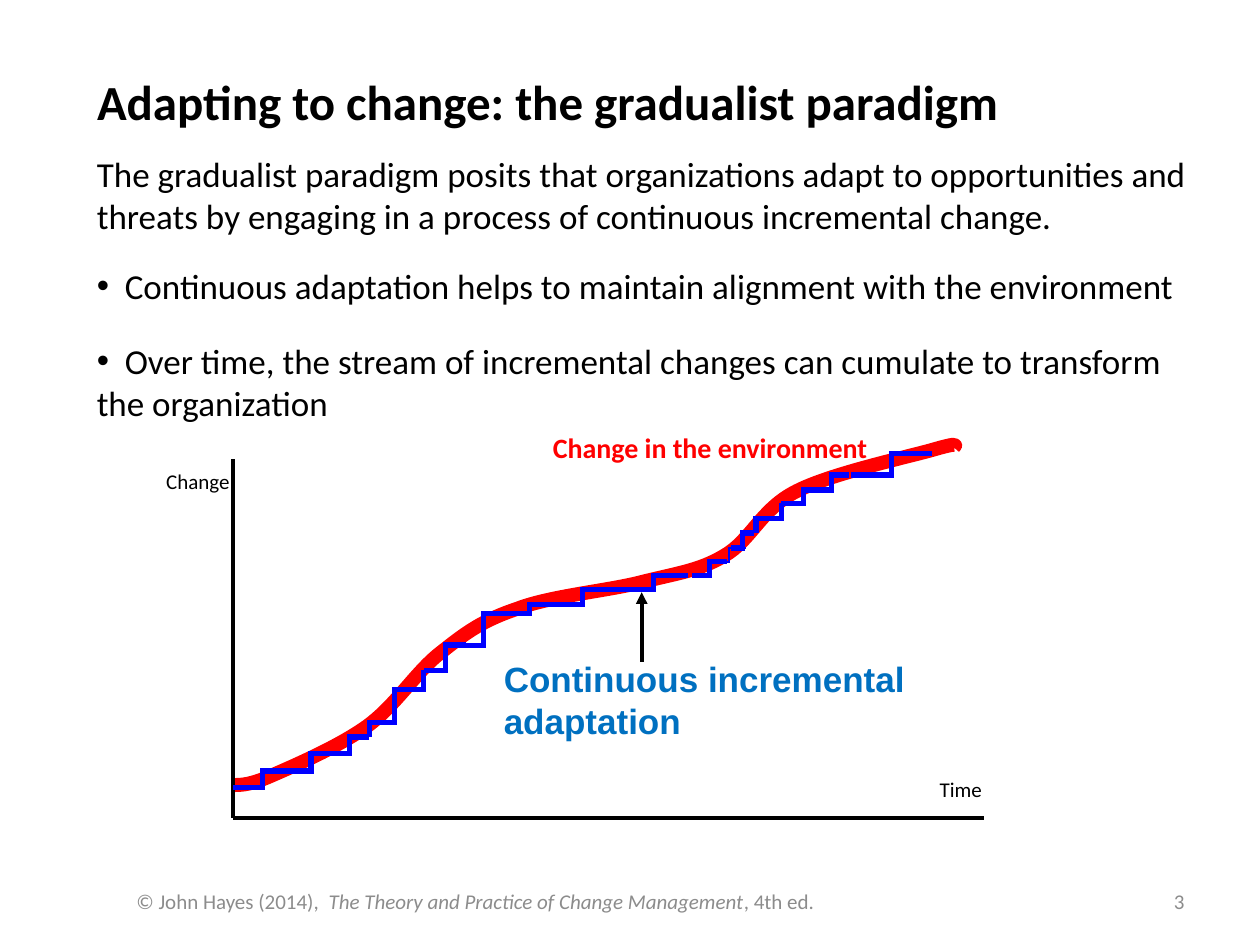
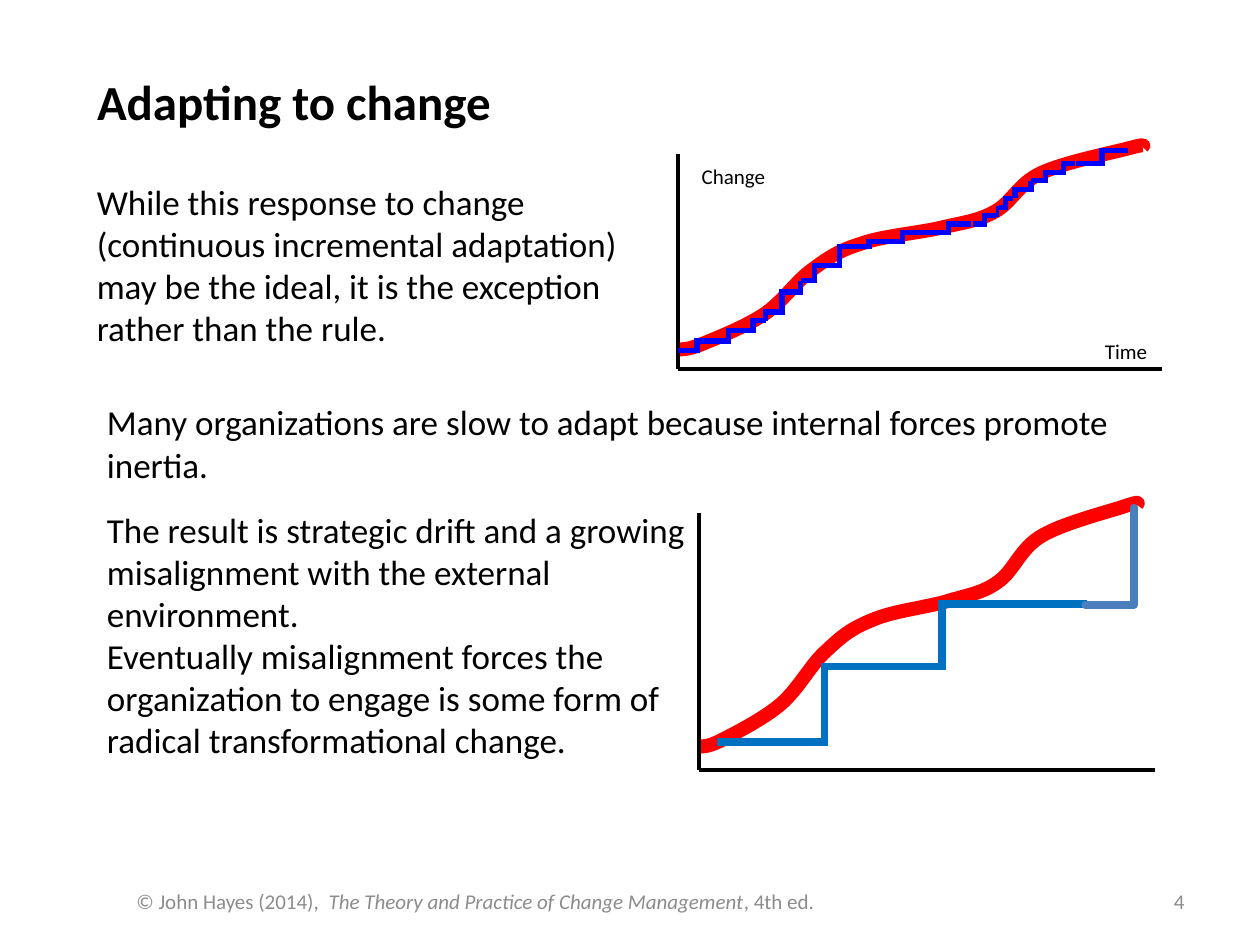
import itertools

import pptx
import pptx.dml.color
import pptx.enum.shapes
import pptx.enum.text
import pptx.oxml
import pptx.oxml.ns
import pptx.util

Pt = pptx.util.Pt
qn = pptx.oxml.ns.qn
ALIGN = pptx.enum.text.PP_ALIGN
ANCHOR = pptx.enum.text.MSO_ANCHOR
CONNECTOR = pptx.enum.shapes.MSO_CONNECTOR

BLACK, GREY, RED = "000000", "8C8C8C", "FF0000"
STEP_BLUE, BLUE, STEEL = "0000FF", "0070C0", "4B7EBC"
BODY_SIZE, LABEL_SIZE = 20, 12

# Graph data: points right of and above the origin, at full scale.
AXIS_WIDTH, AXIS_HEIGHT = 429.12, 205.2
CURVE_START = (0, 18.7)
CURVE_SEGMENTS = [
    ((5, 18.7), (10, 18.7), (23, 24.5)),
    ((36, 30.2), (61, 41), (77, 52.6)),
    ((93.6, 64.8), (105, 84.2), (119.5, 95)),
    ((134, 106.6), (143.3, 113), (162.7, 119.5)),
    ((181.4, 126.7), (213.8, 129.6), (233.3, 134.6)),
    ((253.4, 139.7), (266.4, 141.1), (280.8, 149.8)),
    ((295.9, 158.4), (301.7, 176.4), (321.8, 186.5)),
    ((341.3, 196.6), (384.5, 205.9), (399.6, 210.2)),
    ((414.7, 214.6), (413.3, 213.1), (411.8, 211.7)),
]
STEP_LEVELS = [17.3, 26.6, 36.7, 46.1, 62.6, 84.2, 98.6, 116.6, 121.7, 130.3,
               138.2, 146.2, 154.1, 162.7, 179.6, 187.2, 195.8, 208.1]
STEP_SPANS = [(0, 33.8), (33.8, 55.4), (55.4, 77.8), (77.8, 92.2),
              (92.2, 108.7), (109.4, 133.2), (126, 160.6), (158.4, 180.7),
              (178.6, 220.3), (220.3, 259.9), (262.1, 282.2), (273.6, 293),
              (284.4, 297.4), (298.8, 313.2), (313.2, 339.1), (331.9, 352.1),
              (352.8, 399.6)]
UPRIGHT_STEPS = {3, 4, 13}
THIN_STEP = 11


def rgb(color):
    return pptx.dml.color.RGBColor.from_string(color)


def format_runs(paragraph, size, color, bold=False, font="Calibri"):
    for run in paragraph.runs:
        run.font.size = Pt(size)
        run.font.name = font
        run.font.bold = bold
        run.font.color.rgb = rgb(color)


def add_text(slide, box, text, size=BODY_SIZE, color=BLACK, bold=False,
             font="Calibri", align=ALIGN.LEFT, anchor=ANCHOR.TOP):
    shape = slide.shapes.add_textbox(*map(Pt, box))
    frame = shape.text_frame
    frame.word_wrap = True
    frame.vertical_anchor = anchor
    frame.text = text
    for paragraph in frame.paragraphs:
        paragraph.alignment = align
        format_runs(paragraph, size, color, bold, font)
    return shape


def add_bullet(slide, box, text):
    """Bulleted text whose later lines return to the left edge."""
    shape = add_text(slide, box, "\t" + text)
    properties = shape.text_frame.paragraphs[0]._p.get_or_add_pPr()
    properties.set("marL", "0")
    properties.set("indent", "0")
    namespace = pptx.oxml.ns.nsdecls("a")
    for child in ('<a:buFont {} typeface="Arial"/>',
                  '<a:buChar {} char="•"/>',
                  f'<a:tabLst {{}}><a:tab pos="{Pt(16)}" algn="l"/></a:tabLst>'):
        properties.append(pptx.oxml.parse_xml(child.format(namespace)))


def add_line(slide, start, end, color=BLACK, width=2.25,
             kind=CONNECTOR.STRAIGHT, join="miter"):
    connector = slide.shapes.add_connector(
        kind, *(Pt(value) for value in (*start, *end)))
    connector.line.color.rgb = rgb(color)
    connector.line.width = Pt(width)
    properties = connector._element.spPr
    line = properties.find(qn("a:ln"))
    line.append(line.makeelement(qn(f"a:{join}"), {}))
    properties.append(properties.makeelement(qn("a:effectLst"), {}))
    return connector


def add_arrow(slide, start, end):
    line = add_line(slide, start, end)._element.spPr.find(qn("a:ln"))
    line.append(line.makeelement(qn("a:tailEnd"), {"type": "triangle"}))


def add_step(slide, start, end, color, width, upright=False, bend=0.5,
             join="miter"):
    """Elbow line; an upright one leaves and arrives vertically."""
    if upright:
        middle_x, middle_y = (start[0] + end[0]) / 2, (start[1] + end[1]) / 2
        half_run, half_rise = (end[0] - start[0]) / 2, (start[1] - end[1]) / 2
        start = (middle_x - half_rise, middle_y - half_run)
        end = (middle_x + half_rise, middle_y + half_run)
    connector = add_line(slide, start, end, color, width, CONNECTOR.ELBOW, join)
    properties = connector._element.spPr
    if upright:
        properties.find(qn("a:xfrm")).set("rot", str(270 * 60000))
    adjustments = properties.find(qn("a:prstGeom")).find(qn("a:avLst"))
    adjustments.append(adjustments.makeelement(
        qn("a:gd"), {"name": "adj1", "fmla": f"val {round(bend * 100000)}"}))
    return connector


def add_curve(slide, start, points):
    """Open red curve; each three points are two handles and an end."""
    builder = slide.shapes.build_freeform(*map(Pt, start))
    builder.add_line_segments([tuple(map(Pt, point)) for point in points],
                              close=False)
    curve = builder.convert_to_shape()
    segments = list(curve._element.iter(qn("a:lnTo")))
    for first, second, third in zip(*[iter(segments)] * 3):
        bezier = first.makeelement(qn("a:cubicBezTo"), {})
        first.addprevious(bezier)
        for segment in (first, second, third):
            bezier.append(segment[0])
            segment.getparent().remove(segment)
    curve.shadow.inherit = False
    curve.fill.background()
    curve.line.color.rgb = rgb(RED)
    curve.line.width = Pt(8)


def add_graph(slide, origin, size):
    """Axes and red curve; returns the function that places graph points."""
    def place(x, y):
        return (origin[0] + x * size[0] / AXIS_WIDTH,
                origin[1] - y * size[1] / AXIS_HEIGHT)

    handles = itertools.chain.from_iterable(CURVE_SEGMENTS)
    add_curve(slide, place(*CURVE_START), [place(*point) for point in handles])
    add_line(slide, origin, place(AXIS_WIDTH, 0))
    add_line(slide, origin, place(0, AXIS_HEIGHT))
    return place


def add_incremental_graph(slide, origin, size):
    place = add_graph(slide, origin, size)
    rises = itertools.pairwise(STEP_LEVELS)
    for index, ((left, right), (low, high)) in enumerate(zip(STEP_SPANS, rises)):
        add_step(slide, place(left, low), place(right, high), STEP_BLUE,
                 1.5 if index == THIN_STEP else 3, index in UPRIGHT_STEPS)


def add_drift_graph(slide, origin, size):
    add_graph(slide, origin, size)
    add_step(slide, (409.9, 424), (532.4, 380.9), BLUE, 4.5)
    add_step(slide, (499, 380.9), (621.4, 345.4), BLUE, 4.5, bend=0.32)
    last = add_step(slide, (620.2, 345.6), (647.9, 290.2), STEEL, 4.5, True,
                    bend=0, join="round")
    last._element.spPr.find(qn("a:ln")).set("cap", "rnd")


def add_titled_slide(presentation, title, number):
    slide = presentation.slides.add_slide(presentation.slide_layouts[5])
    shape = slide.shapes.title
    shape.left, shape.top, shape.width, shape.height = map(
        Pt, (48.24, 37.5, 601.2, 41.2))
    frame = shape.text_frame
    frame.text = title
    frame.vertical_anchor = ANCHOR.TOP
    frame.auto_size = pptx.enum.text.MSO_AUTO_SIZE.NONE
    frame.paragraphs[0].alignment = ALIGN.LEFT
    format_runs(frame.paragraphs[0], 28, BLACK, bold=True)

    footer = add_text(slide, (70.8, 500.4, 550, 28.8), "© John Hayes (2014),  ",
                      anchor=ANCHOR.MIDDLE)
    paragraph = footer.text_frame.paragraphs[0]
    book = paragraph.add_run()
    book.text = "The Theory and Practice of Change Management"
    paragraph.add_run().text = ", 4th ed."
    format_runs(paragraph, LABEL_SIZE, GREY)
    book.font.italic = True
    add_text(slide, (516.2, 500.4, 167.8, 28.8), str(number), LABEL_SIZE, GREY,
             align=ALIGN.RIGHT, anchor=ANCHOR.MIDDLE)
    return slide


def build_gradualist_slide(presentation):
    slide = add_titled_slide(
        presentation, "Adapting to change: the gradualist paradigm", 3)
    add_text(slide, (48.24, 83.5, 646.6, 55.4),
             "The gradualist paradigm posits that organizations adapt to "
             "opportunities and threats by engaging in a process of "
             "continuous incremental change.")
    add_incremental_graph(slide, (133.2, 467.28), (AXIS_WIDTH, AXIS_HEIGHT))
    add_text(slide, (87.9, 264.2, 67.7, 35.3), "Change", LABEL_SIZE)
    add_text(slide, (529.9, 439.9, 64.8, 39.6), "Time", LABEL_SIZE)
    add_text(slide, (308.9, 242.6, 223.2, 50.4), "Change in the environment",
             16, RED, bold=True)
    add_text(slide, (280.8, 372.2, 316.8, 61.9),
             "Continuous incremental adaptation", BODY_SIZE, BLUE, bold=True,
             font="Arial")
    add_arrow(slide, (366.7, 378), (366.7, 338.4))
    add_bullet(slide, (48.24, 190.6, 629.3, 55.4),
               "Over time, the stream of incremental changes can cumulate to "
               "transform the organization")
    add_bullet(slide, (48.24, 147.6, 640.8, 31.7),
               "Continuous adaptation helps to maintain alignment with the "
               "environment")


def build_drift_slide(presentation):
    slide = add_titled_slide(presentation, "Adapting to change", 4)
    add_text(slide, (48.24, 99.8, 329, 104.4),
             "While this response to change (continuous incremental "
             "adaptation) may be the ideal, it is the exception rather than "
             "the rule.")
    add_incremental_graph(slide, (387.4, 210.9), (276.5, 123.1))
    add_text(slide, (393.9, 90, 60.5, 26.6), "Change", LABEL_SIZE)
    add_text(slide, (624.3, 190, 41.8, 23.8), "Time", LABEL_SIZE)
    add_text(slide, (54, 225.6, 612, 55.4),
             "Many organizations are slow to adapt because internal forces "
             "promote inertia.")
    add_text(slide, (54, 287.1, 351.4, 152.6),
             "The result is strategic drift and a growing misalignment with "
             "the external environment.\n"
             "Eventually misalignment forces the organization to engage is "
             "some form of radical transformational change.")
    add_drift_graph(slide, (399.6, 439.9), (260.6, 146.9))


def main():
    presentation = pptx.Presentation()
    presentation.slide_width = Pt(720)
    presentation.slide_height = Pt(540)
    build_gradualist_slide(presentation)
    build_drift_slide(presentation)
    presentation.save("out.pptx")


if __name__ == "__main__":
    main()
